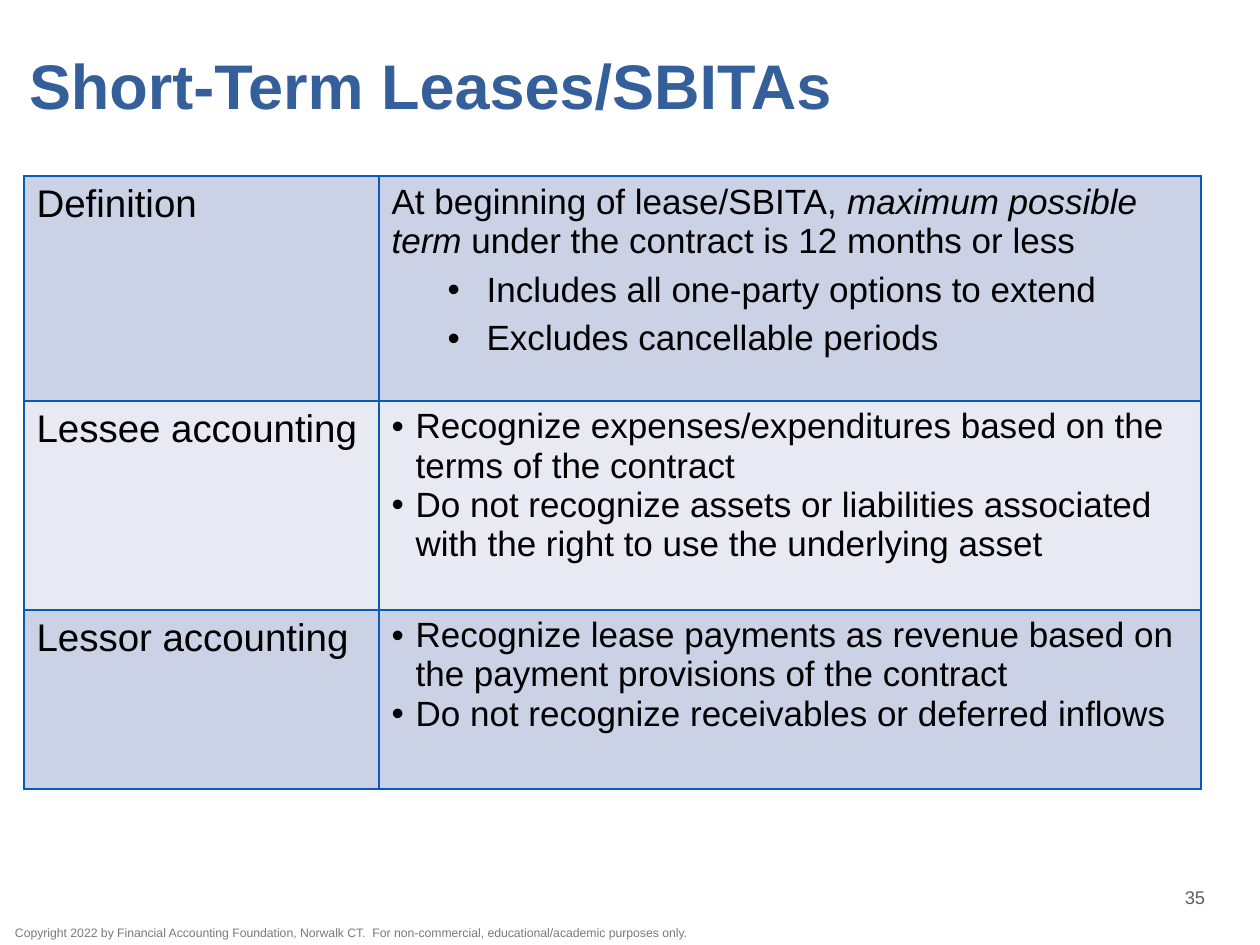
from dataclasses import dataclass

from lxml.etree import SubElement
from pptx import Presentation
from pptx.dml.color import RGBColor
from pptx.enum.text import MSO_ANCHOR, PP_ALIGN
from pptx.oxml import parse_xml
from pptx.oxml.ns import nsdecls, qn
from pptx.util import Pt

PX = 914400 / 126


def px(length):
    return round(length * PX)


@dataclass(frozen=True)
class Theme:
    font: str = "Arial"
    title: str = "355F9A"
    text: str = "000000"
    number: str = "5F5F5F"
    copyright: str = "78797B"
    border: str = "085BB8"
    bands: tuple = ("CCD2E6", "E7EAF3")
    title_size: float = 36
    label_size: float = 22
    body_size: float = 20
    number_size: float = 10.5
    copyright_size: float = 7


THEME = Theme()

# Each paragraph is (level, runs); each run is (text, italic).
ROWS = [
    ("Definition", 225, [
        (0, [("At beginning of lease/SBITA, ", False),
             ("maximum possible term ", True),
             ("under the contract is 12 months or less", False)]),
        (2, [("Includes all one-party options to extend", False)]),
        (2, [("Excludes cancellable periods", False)]),
    ]),
    ("Lessee accounting", 209, [
        (1, [("Recognize expenses/expenditures based on the terms of the contract", False)]),
        (1, [("Do not recognize assets or liabilities associated with the right "
              "to use the underlying asset", False)]),
    ]),
    ("Lessor accounting", 179, [
        (1, [("Recognize lease payments as revenue based on the payment "
              "provisions of the contract", False)]),
        (1, [("Do not recognize receivables or deferred inflows", False)]),
    ]),
]
INDENTS = {1: (24, 24), 2: (95, 39)}  # text margin, hanging width


def add_run(paragraph, text, size, color, bold=False, italic=False):
    run = paragraph.add_run()
    run.text = text
    font = run.font
    font.name, font.size = THEME.font, Pt(size)
    font.bold, font.italic = bold, italic
    font.color.rgb = RGBColor.from_string(color)


def add_bullet(paragraph, level):
    margin, hanging = INDENTS[level]
    properties = paragraph._p.get_or_add_pPr()
    properties.set("marL", str(px(margin)))
    properties.set("indent", str(-px(hanging)))
    SubElement(properties, qn("a:buFont")).set("typeface", THEME.font)
    SubElement(properties, qn("a:buChar")).set("char", "•")
    if level == 2:
        paragraph.level = 1
        paragraph.line_spacing = 1.12
        paragraph.space_before = Pt(3)


def style_cell(cell, color):
    cell.fill.solid()
    cell.fill.fore_color.rgb = RGBColor.from_string(color)
    properties = cell._tc.get_or_add_tcPr()
    for position, side in enumerate(("lnL", "lnR", "lnT", "lnB")):
        properties.insert(position, parse_xml(
            f'<a:{side} {nsdecls("a")} w="{Pt(1)}"><a:solidFill>'
            f'<a:srgbClr val="{THEME.border}"/></a:solidFill></a:{side}>'))


def fill_title(slide, left, top, width, height):
    title = slide.shapes.title
    title.left, title.top, title.width, title.height = map(px, (left, top, width, height))
    frame = title.text_frame
    frame.margin_left = px(13)
    frame.margin_top = frame.margin_right = frame.margin_bottom = 0
    frame.vertical_anchor = MSO_ANCHOR.MIDDLE
    paragraph = frame.paragraphs[0]
    paragraph.alignment = PP_ALIGN.LEFT
    paragraph.line_spacing = Pt(37)
    add_run(paragraph, "Short-Term Leases/SBITAs", THEME.title_size, THEME.title, bold=True)


def add_accounting_table(slide, left, top, label_width, body_width):
    height = sum(row_height for _, row_height, _ in ROWS)
    table = slide.shapes.add_table(
        len(ROWS), 2, px(left), px(top), px(label_width + body_width), px(height)).table
    table.first_row = table.horz_banding = False
    for column, width in zip(table.columns, (label_width, body_width)):
        column.width = px(width)
    for index, (label, row_height, paragraphs) in enumerate(ROWS):
        table.rows[index].height = px(row_height)
        label_cell, body_cell = table.rows[index].cells
        for cell in (label_cell, body_cell):
            style_cell(cell, THEME.bands[index % 2])
        add_run(label_cell.text_frame.paragraphs[0], label, THEME.label_size, THEME.text)
        frame = body_cell.text_frame
        for number, (level, runs) in enumerate(paragraphs):
            paragraph = frame.add_paragraph() if number else frame.paragraphs[0]
            if level:
                add_bullet(paragraph, level)
            for text, italic in runs:
                add_run(paragraph, text, THEME.body_size, THEME.text, italic=italic)


def add_text_box(slide, left, top, width, height):
    frame = slide.shapes.add_textbox(*map(px, (left, top, width, height))).text_frame
    frame.word_wrap = True
    frame.margin_left = frame.margin_top = frame.margin_right = frame.margin_bottom = 0
    return frame


def add_slide_number(slide, left, top, width, height):
    frame = add_text_box(slide, left, top, width, height)
    frame.vertical_anchor = MSO_ANCHOR.MIDDLE
    paragraph = frame.paragraphs[0]
    paragraph.alignment = PP_ALIGN.CENTER
    add_run(paragraph, "35", THEME.number_size, THEME.number)


def add_copyright(slide, left, top, width, height):
    frame = add_text_box(slide, left, top, width, height)
    add_run(frame.paragraphs[0],
            "Copyright 2022 by Financial Accounting Foundation, Norwalk CT.  "
            "For non-commercial, educational/academic purposes only.",
            THEME.copyright_size, THEME.copyright)


def main():
    presentation = Presentation()
    presentation.slide_width, presentation.slide_height = px(1260), px(945)
    slide = presentation.slides.add_slide(presentation.slide_layouts[5])
    add_copyright(slide, 15, 925, 684, 18)
    fill_title(slide, 16, 28, 1196, 123)
    add_slide_number(slide, 1130, 876, 130, 42)
    add_accounting_table(slide, 24, 176, 355, 822)
    presentation.save("out.pptx")


if __name__ == "__main__":
    main()
